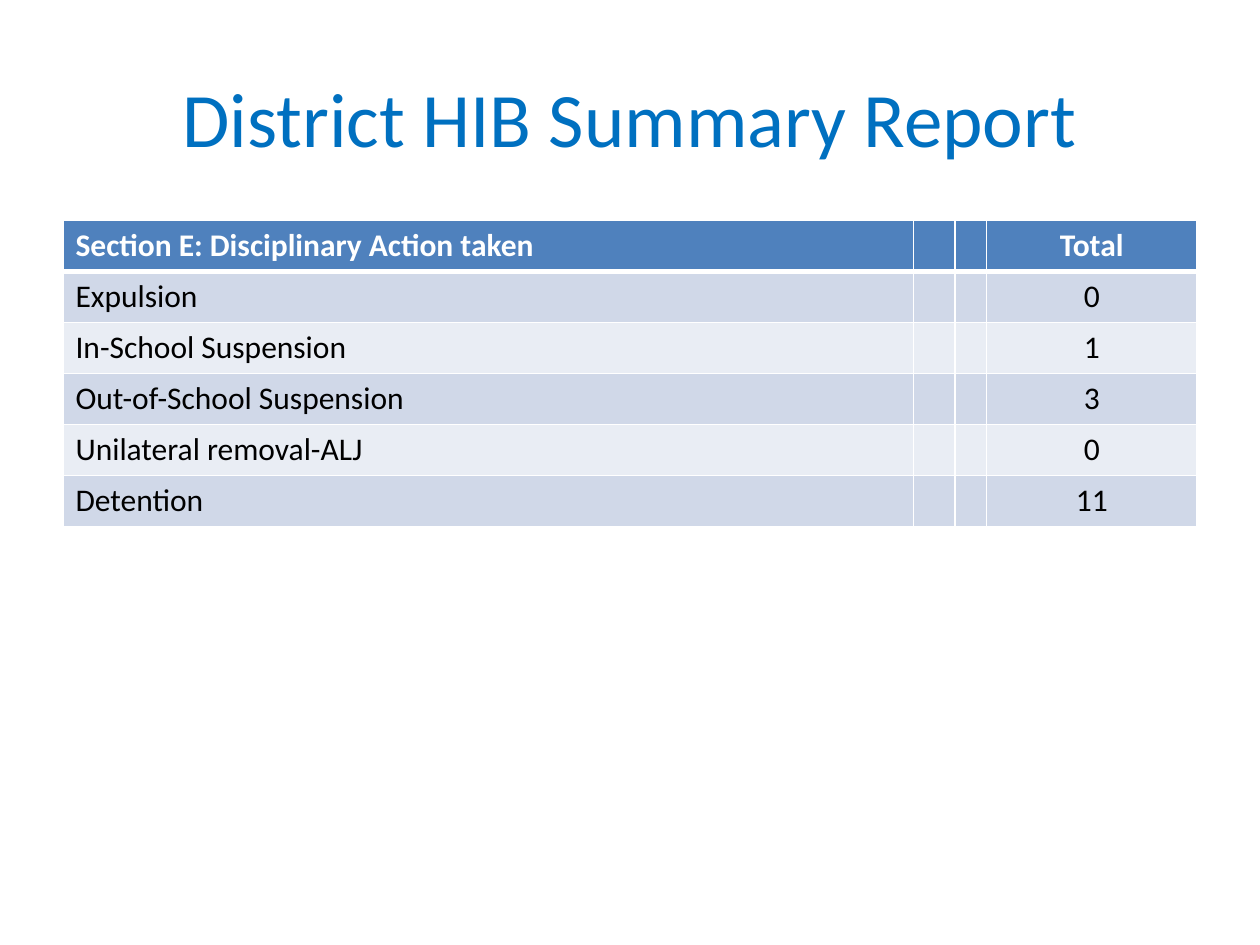
import dataclasses

import lxml.etree
import pptx
import pptx.dml.color
import pptx.enum.text
import pptx.oxml.ns
import pptx.slide
import pptx.table
import pptx.text.text
import pptx.util

SLIDE_WIDTH = pptx.util.Inches(10)
SLIDE_HEIGHT = pptx.util.Inches(7.5)
MARGIN_SHARE = 0.05
CONTENT_SHARE = 1 - 2 * MARGIN_SHARE
COLUMN_INCHES = (6.75, 0.33, 0.25, 1.67)
ROW_HEIGHT = pptx.util.Inches(0.405)

WHITE = "FFFFFF"
BLACK = "000000"
TITLE_BLUE = "0070C0"
HEADER_BLUE = "4F81BD"
BANDS = ("D0D8E8", "E9EDF4")


@dataclasses.dataclass(frozen=True)
class ActionRow:
    label: str
    total: str


HEADER = ActionRow("Section E: Disciplinary Action taken", "Total")
ACTIONS = (
    ActionRow("Expulsion", "0"),
    ActionRow("In-School Suspension", "1"),
    ActionRow("Out-of-School Suspension", "3"),
    ActionRow("Unilateral removal-ALJ", "0"),
    ActionRow("Detention", "11"),
)


def color(value: str) -> pptx.dml.color.RGBColor:
    return pptx.dml.color.RGBColor.from_string(value)


def write_text(frame: pptx.text.text.TextFrame, text: str, size: float,
               text_color: str, bold: bool, centered: bool) -> None:
    paragraph = frame.paragraphs[0]
    alignment = pptx.enum.text.PP_ALIGN
    paragraph.alignment = alignment.CENTER if centered else alignment.LEFT
    run = paragraph.add_run()
    run.text = text
    font_format = {"name": "Calibri", "size": pptx.util.Pt(size), "bold": bold}
    for attribute, value in font_format.items():
        setattr(run.font, attribute, value)
    run.font.color.rgb = color(text_color)


def add_borders(cell: pptx.table._Cell, widths: dict[str, float]) -> None:
    """Draw white borders; widths maps side tags, in schema order, to points."""
    properties = cell._tc.get_or_add_tcPr()
    qualified = pptx.oxml.ns.qn
    for side, width in widths.items():
        line = lxml.etree.SubElement(properties, qualified(f"a:{side}"), w=str(pptx.util.Pt(width)))
        fill = lxml.etree.SubElement(line, qualified("a:solidFill"))
        lxml.etree.SubElement(fill, qualified("a:srgbClr"), val=WHITE)


def add_title(slide: pptx.slide.Slide, text: str) -> None:
    box = slide.shapes.add_textbox(
        int(SLIDE_WIDTH * MARGIN_SHARE), int(SLIDE_HEIGHT * 0.04),
        int(SLIDE_WIDTH * CONTENT_SHARE), pptx.util.Inches(1.25))
    frame = box.text_frame
    frame_format = {"word_wrap": True, "vertical_anchor": pptx.enum.text.MSO_ANCHOR.MIDDLE}
    for attribute, value in frame_format.items():
        setattr(frame, attribute, value)
    write_text(frame, text, 44, TITLE_BLUE, bold=False, centered=True)


def fill_row(table: pptx.table.Table, row_index: int, action: ActionRow) -> None:
    is_header = row_index == 0
    row_fill = HEADER_BLUE if is_header else BANDS[(row_index - 1) % len(BANDS)]
    widths = {
        "lnL": 1,
        "lnR": 1,
        "lnT": 3 if row_index == 1 else 1,
        "lnB": 3 if is_header else 1,
    }
    last_column = len(COLUMN_INCHES) - 1
    texts = {0: action.label, last_column: action.total}
    for column_index in range(len(COLUMN_INCHES)):
        cell = table.cell(row_index, column_index)
        add_borders(cell, widths)
        cell.fill.solid()
        cell.fill.fore_color.rgb = color(row_fill)
        if column_index in texts:
            write_text(cell.text_frame, texts[column_index], 18,
                       WHITE if is_header else BLACK,
                       bold=is_header, centered=column_index == last_column)


def add_action_table(slide: pptx.slide.Slide) -> None:
    rows = (HEADER, *ACTIONS)
    frame = slide.shapes.add_table(
        len(rows), len(COLUMN_INCHES),
        int(SLIDE_WIDTH * MARGIN_SHARE), pptx.util.Inches(1.75),
        int(SLIDE_WIDTH * CONTENT_SHARE), ROW_HEIGHT * len(rows))
    table = frame.table
    for column, width in zip(table.columns, COLUMN_INCHES):
        column.width = pptx.util.Inches(width)
    for row_index, action in enumerate(rows):
        table.rows[row_index].height = ROW_HEIGHT
        fill_row(table, row_index, action)


def main() -> None:
    presentation = pptx.Presentation()
    presentation.slide_width = SLIDE_WIDTH
    presentation.slide_height = SLIDE_HEIGHT
    slide = presentation.slides.add_slide(presentation.slide_layouts[6])
    add_title(slide, "District HIB Summary Report")
    add_action_table(slide)
    presentation.save("out.pptx")


if __name__ == "__main__":
    main()
